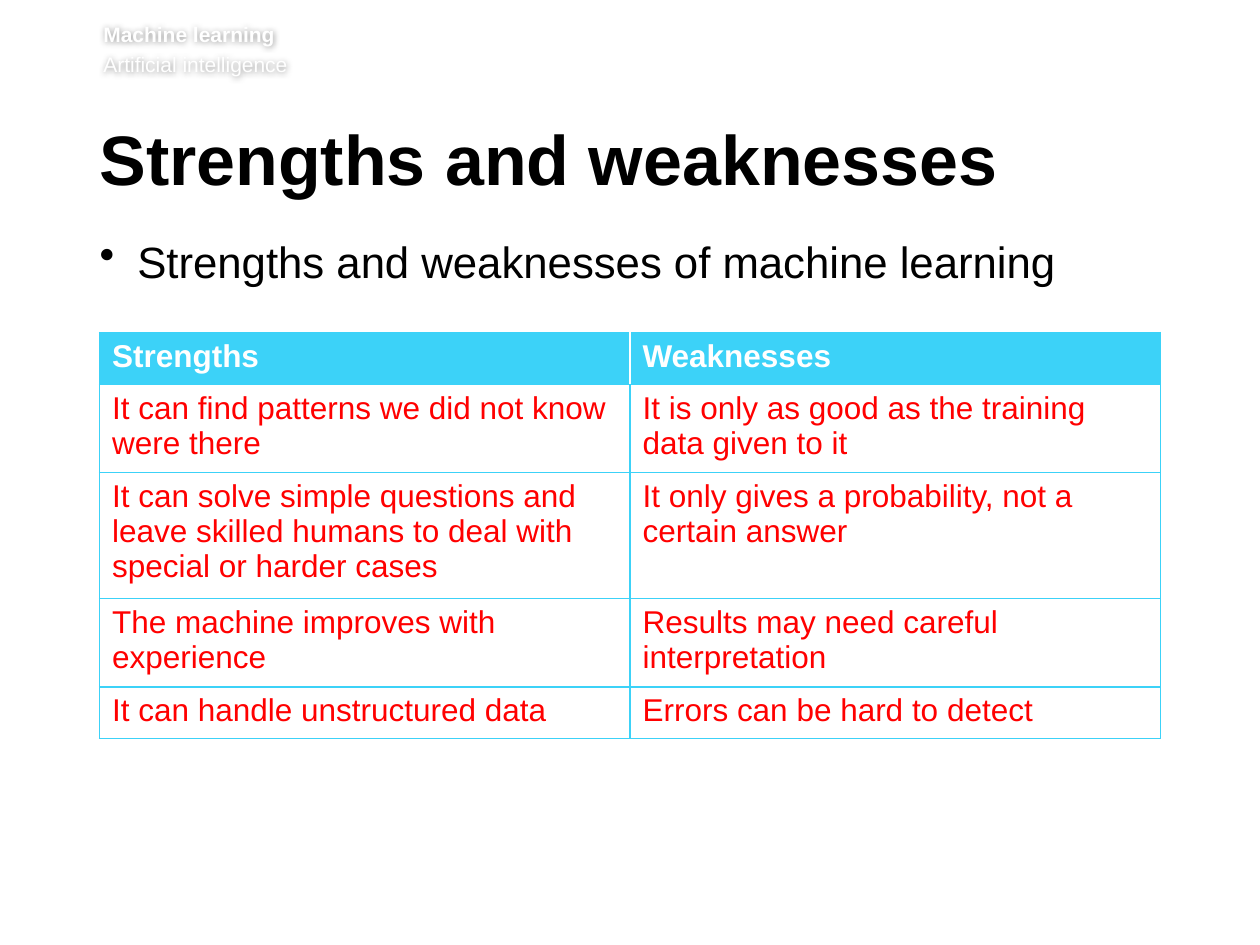
from lxml import etree
from pptx import Presentation
from pptx.dml.color import RGBColor
from pptx.oxml.ns import qn
from pptx.util import Inches, Pt

FONT = "Arial"
COLORS = {"white": "FFFFFF", "black": "000000", "cyan": "3CD2F8", "red": "FF0000"}

# Content
HEADER = ["Machine learning", "Artificial intelligence"]
TITLE = "Strengths and weaknesses"
INTRO = "Strengths and weaknesses of machine learning"
COMPARISON = [
    ("Strengths", "Weaknesses"),
    ("It can find patterns we did not know were there",
     "It is only as good as the training data given to it"),
    ("It can solve simple questions and leave skilled humans to deal with "
     "special or harder cases",
     "It only gives a probability, not a certain answer"),
    ("The machine improves with experience",
     "Results may need careful interpretation"),
    ("It can handle unstructured data", "Errors can be hard to detect"),
]
LEFT = 0.79
COLUMN_WIDTH, ROW_HEIGHT = 4.21, 0.41


def style(paragraph, size, color, bold=False):
    for run in paragraph.runs:
        run.font.name = FONT
        run.font.size = Pt(size)
        run.font.bold = bold
        run.font.color.rgb = RGBColor.from_string(COLORS[color])


def add_text(slide, lines, left, top, width, height, insets):
    box = slide.shapes.add_textbox(*map(Inches, (left, top, width, height)))
    frame = box.text_frame
    frame.text = "\n".join(lines)
    frame.word_wrap = True
    (frame.margin_left, frame.margin_top,
     frame.margin_right, frame.margin_bottom) = map(Inches, insets)
    return box


def add_soft_shadow(box):
    effects = etree.SubElement(box._element.spPr, qn("a:effectLst"))
    shadow = etree.SubElement(effects, qn("a:outerShdw"),
                              blurRad=str(Inches(0.05)), dist="0", dir="0")
    color = etree.SubElement(shadow, qn("a:srgbClr"), val=COLORS["black"])
    etree.SubElement(color, qn("a:alpha"), val="40000")


def set_borders(cell, sides):
    properties = cell._tc.get_or_add_tcPr()
    for position, (side, color) in enumerate(sides.items()):
        line = etree.Element(qn(f"a:ln{side}"), w=str(Pt(1)))
        fill = etree.SubElement(line, qn("a:solidFill"))
        etree.SubElement(fill, qn("a:srgbClr"), val=COLORS[color])
        properties.insert(position, line)


prs = Presentation()
prs.slide_width, prs.slide_height = Inches(10), Inches(7.5)
slide = prs.slides.add_slide(prs.slide_layouts[6])

# Running header
header = add_text(slide, HEADER, 0.82, 0.17, 8.82, 0.49, (0, 0, 0, 0.05))
subject, topic = header.text_frame.paragraphs
style(subject, 12, "white", bold=True)
style(topic, 12, "white")
topic.space_before = Pt(2.9)
add_soft_shadow(header)

# Title
title = add_text(slide, [TITLE], LEFT, 0.99, 8.55, 0.73, (0, 0.05, 0.1, 0.05))
heading = title.text_frame.paragraphs[0]
heading.line_spacing = Pt(39)
style(heading, 40, "black", bold=True)

# Bulleted introduction
intro = add_text(slide, [INTRO], LEFT, 1.86, 8.53, 3.78, (0, 0, 0.1, 0.05))
bullet = intro.text_frame.paragraphs[0]
indent = Inches(0.3)
bullet_properties = bullet._p.get_or_add_pPr()
bullet_properties.set("marL", str(indent))
bullet_properties.set("indent", str(-indent))
etree.SubElement(bullet_properties, qn("a:buChar"), char="•")
bullet.space_after = Pt(14)
style(bullet, 25, "black")

# Comparison table
row_count, column_count = len(COMPARISON), len(COMPARISON[0])
table = slide.shapes.add_table(
    row_count, column_count, Inches(LEFT), Inches(2.64),
    Inches(COLUMN_WIDTH * column_count), Inches(ROW_HEIGHT * row_count)).table
for column in table.columns:
    column.width = Inches(COLUMN_WIDTH)
for r, entries in enumerate(COMPARISON):
    table.rows[r].height = Inches(ROW_HEIGHT)
    is_head = r == 0
    for c, entry in enumerate(entries):
        cell = table.cell(r, c)
        cell.text = entry
        style(cell.text_frame.paragraphs[0], 18,
              "white" if is_head else "red", bold=is_head)
        cell.fill.solid()
        cell.fill.fore_color.rgb = RGBColor.from_string(
            COLORS["cyan" if is_head else "white"])
        sides = dict.fromkeys("LRTB", "cyan")
        if is_head:
            if c > 0:
                sides["L"] = "white"
            if c < column_count - 1:
                sides["R"] = "white"
        set_borders(cell, sides)

prs.save("out.pptx")
